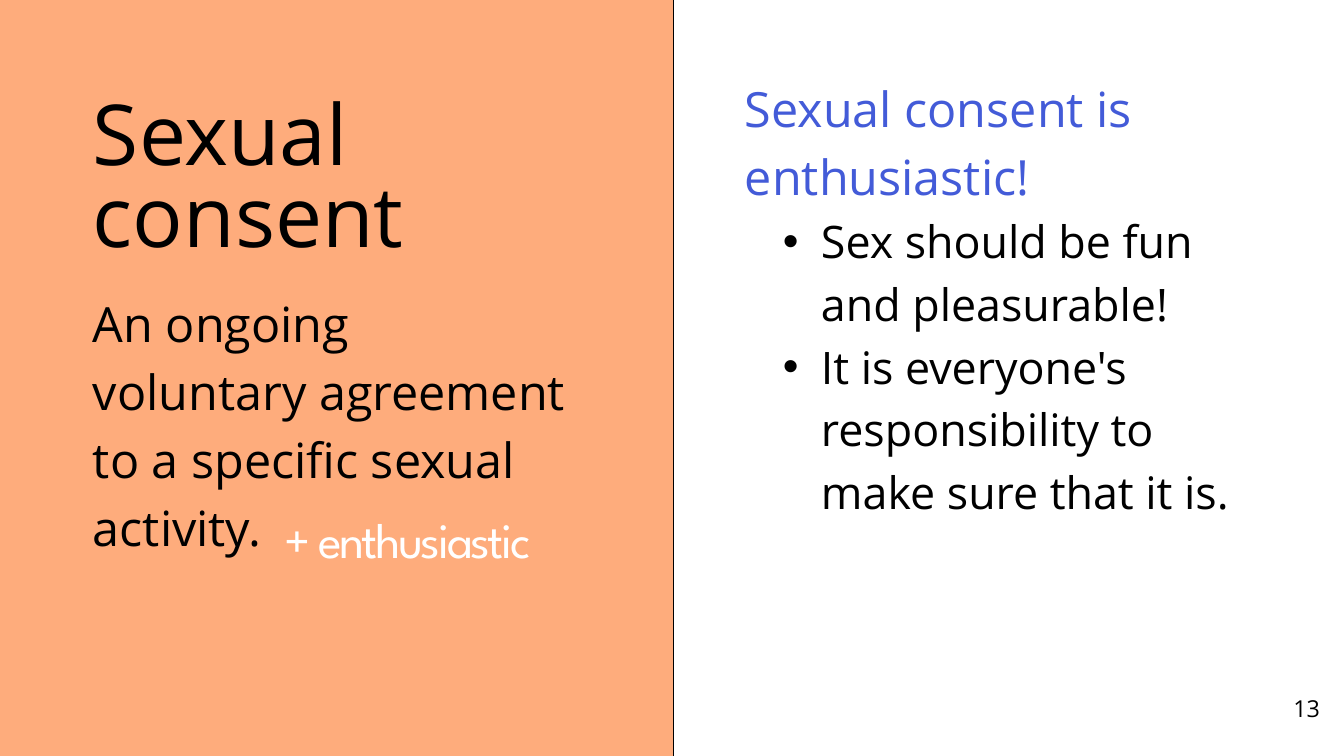
import pptx
import pptx.dml.color
import pptx.enum.shapes
import pptx.enum.text
import pptx.oxml.ns
import pptx.util
from lxml import etree

COLOURS = {"ink": "000000", "panel": "FEAC7C", "accent": "435BD8", "paper": "FFFFFF"}
ANCHOR = pptx.enum.text.MSO_ANCHOR
ALIGN = pptx.enum.text.PP_ALIGN


def px(length):
    """Turn whole pixels into EMU."""
    return pptx.util.Emu(round(length * 914400 / 67.2))


def rgb(name):
    """Look up a named colour."""
    return pptx.dml.color.RGBColor.from_string(COLOURS[name])


def add_sub(parent, tag, **attributes):
    """Append a drawing element to a parent."""
    return etree.SubElement(parent, pptx.oxml.ns.qn(tag), **attributes)


def write(paragraph, text, size=52, colour="ink", font="Open Sans", leading=None,
          align=ALIGN.LEFT, tracking=None, bullet=False):
    """Write one formatted paragraph."""
    paragraph.alignment = align
    paragraph.space_before = paragraph.space_after = pptx.util.Pt(0)
    if leading:
        paragraph.line_spacing = pptx.util.Pt(leading)
    if bullet:
        paragraph.level = 1
        properties = paragraph._p.get_or_add_pPr()
        properties.set("marL", str(px(76)))
        properties.set("indent", str(px(-38)))
        add_sub(properties, "a:buFont", typeface="Arial")
        add_sub(properties, "a:buChar", char="•")
    run = paragraph.add_run()
    run.text = text
    run.font.name = font
    run.font.size = pptx.util.Pt(size)
    run.font.color.rgb = rgb(colour)
    if tracking:
        run._r.get_or_add_rPr().set("spc", str(round(tracking * 100)))


class SlideBuilder:
    """Hold the style and the current slide."""

    def __init__(self, slide):
        """Start on a slide with a plain background."""
        self.slide = slide
        self.shapes = slide.shapes
        slide.background.fill.solid()
        slide.background.fill.fore_color.rgb = rgb("paper")

    def line(self, x1, y1, x2, y2):
        """Draw a thin straight line."""
        line = self.shapes.add_connector(
            pptx.enum.shapes.MSO_CONNECTOR.STRAIGHT, px(x1), px(y1), px(x2), px(y2))
        line.line.color.rgb = rgb("ink")
        line.line.width = pptx.util.Pt(0.75)
        add_sub(line.element.spPr, "a:effectLst")

    def panel(self, left, top, width, height):
        """Draw a filled rectangle without an outline."""
        panel = self.shapes.add_shape(
            pptx.enum.shapes.MSO_SHAPE.RECTANGLE, px(left), px(top), px(width), px(height))
        panel.shadow.inherit = False
        panel.fill.solid()
        panel.fill.fore_color.rgb = rgb("panel")
        panel.line.fill.background()

    def fill_text(self, shape, paragraphs, insets=(0, 0), anchor=ANCHOR.TOP, grow=True):
        """Set up a text frame and write its paragraphs."""
        frame = shape.text_frame
        frame.word_wrap = True
        frame.vertical_anchor = anchor
        sizing = pptx.enum.text.MSO_AUTO_SIZE
        frame.auto_size = sizing.SHAPE_TO_FIT_TEXT if grow else sizing.NONE
        frame.margin_left = frame.margin_right = px(insets[0])
        frame.margin_top = frame.margin_bottom = px(insets[1])
        for index, (text, style) in enumerate(paragraphs):
            paragraph = frame.add_paragraph() if index else frame.paragraphs[0]
            write(paragraph, text, **style)

    def title(self, left, top, width, height, paragraphs):
        """Place the title placeholder above the shapes drawn so far."""
        title = self.shapes.title
        title.left, title.top, title.width, title.height = map(px, (left, top, width, height))
        self.fill_text(title, paragraphs)
        self.shapes.element.append(title.element)

    def text(self, left, top, width, height, paragraphs, **frame_format):
        """Add a text box."""
        box = self.shapes.add_textbox(px(left), px(top), px(width), px(height))
        self.fill_text(box, paragraphs, **frame_format)


def main():
    """Build and save the consent slide."""
    presentation = pptx.Presentation()
    presentation.slide_width, presentation.slide_height = px(1344), px(756)
    builder = SlideBuilder(presentation.slides.add_slide(presentation.slide_layouts[5]))

    heading = dict(size=90, leading=87.3)
    body = dict(size=52, leading=72.8)
    point = dict(size=48, leading=67.2, bullet=True)

    builder.line(673, -212, 673, 980)
    builder.panel(-64, -30, 737, 817)
    builder.title(93, 101, 347, 167, [("Sexual", heading), ("consent", heading)])
    builder.text(93, 284, 482, 269, [
        ("An ongoing voluntary agreement to a specific sexual activity.", body)])
    builder.text(745, 69, 523, 445, [
        ("Sexual consent is enthusiastic!", dict(body, colour="accent")),
        ("Sex should be fun and pleasurable!", point),
        ("It is everyone's responsibility to make sure that it is.", point)])
    builder.text(284, 521, 388, 52, [
        ("+ enthusiastic", dict(size=53, colour="paper", font="League Spartan",
                                leading=50.4, tracking=-2.6))])
    builder.text(1131, 686, 196, 44, [("13", dict(size=25, align=ALIGN.RIGHT))],
                 insets=(7, 3), anchor=ANCHOR.MIDDLE, grow=False)

    presentation.save("out.pptx")


if __name__ == "__main__":
    main()
